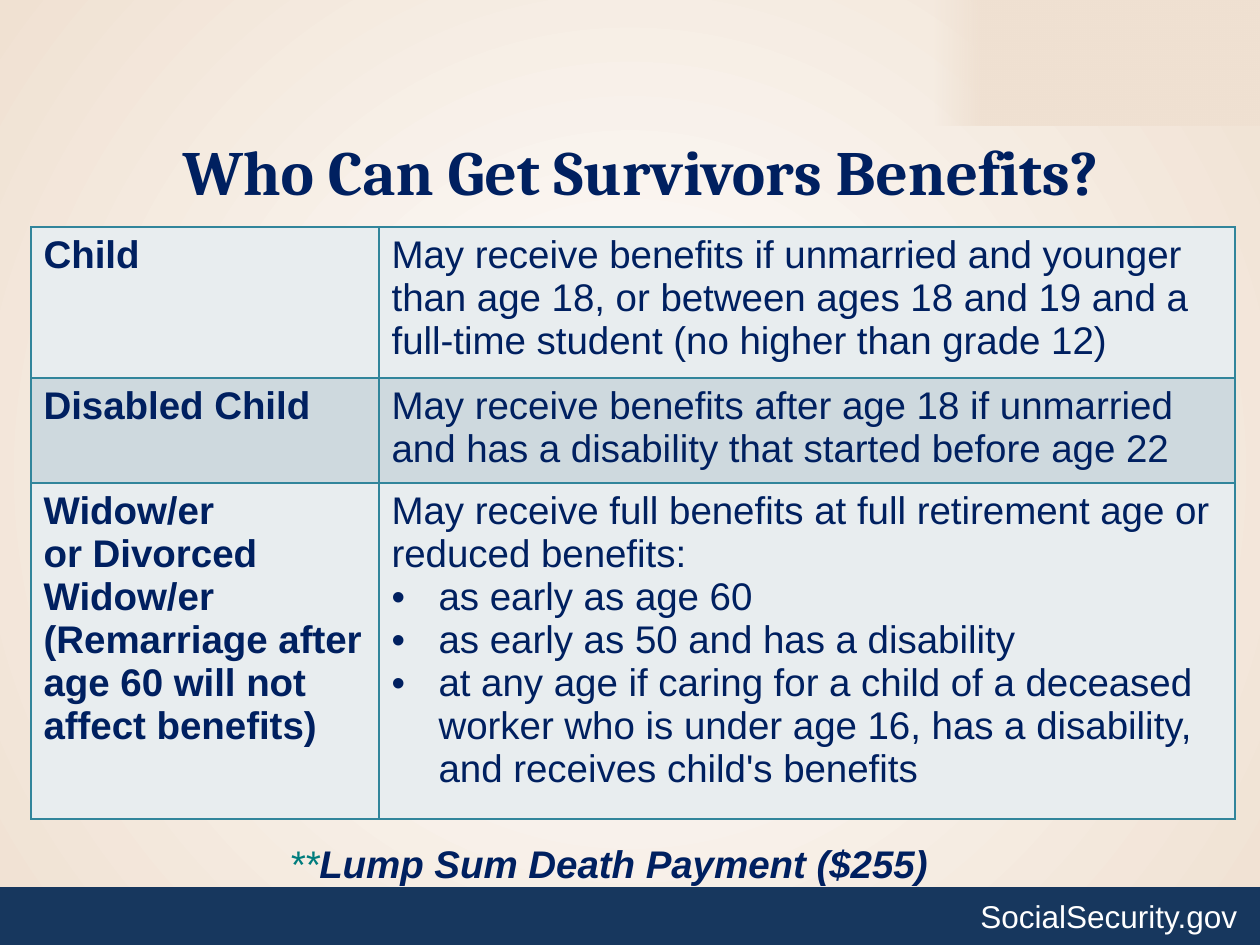
from dataclasses import dataclass

from lxml import etree
from pptx import Presentation
from pptx import util as u
from pptx.dml.color import RGBColor
from pptx.enum import shapes, text
from pptx.oxml import ns


@dataclass(frozen=True)
class Theme:
    navy: str = "002060"
    bar: str = "17375E"
    white: str = "FFFFFF"
    sand: str = "F0E1D2"
    teal: str = "007D7D"
    border: str = "31859B"
    bands: tuple = ("E8EDEF", "CED9DE")
    heading_font: str = "Cambria"
    body_font: str = "Arial"
    title_size: int = 36
    body_size: int = 22
    footer_size: int = 18


THEME = Theme()
EMU_PER_PX = u.Inches(1) / 126

# Each row: label paragraphs, statement, bullet points, height in px
ROWS = [
    (["Child"],
     "May receive benefits if unmarried and younger than age 18, or between "
     "ages 18 and 19 and a full-time student (no higher than grade 12)",
     [], 151),
    (["Disabled Child"],
     "May receive benefits after age 18 if unmarried and has a disability "
     "that started before age 22",
     [], 105),
    (["Widow/er", "or Divorced Widow/er",
      "(Remarriage after age 60 will not affect benefits)"],
     "May receive full benefits at full retirement age or reduced benefits:",
     ["as early as age 60",
      "as early as 50 and has a disability",
      "at any age if caring for a child of a deceased worker who is under "
      "age 16, has a disability, and receives child's benefits"], 336),
]


def px(value):
    return u.Emu(round(value * EMU_PER_PX))


def rgb(colour):
    return RGBColor.from_string(colour)


def add_text(paragraph, words, size=THEME.body_size, colour=THEME.navy,
             font=THEME.body_font, bold=False, italic=False):
    run = paragraph.add_run()
    run.text = words
    run.font.size = u.Pt(size)
    run.font.name = font
    run.font.bold = bold
    run.font.italic = italic
    run.font.color.rgb = rgb(colour)


def add_box(slide, left, top, width, height):
    shape = slide.shapes.add_textbox(px(left), px(top), px(width), px(height))
    shape.text_frame.word_wrap = True
    return shape.text_frame.paragraphs[0]


def add_panel(slide, left, top, width, height):
    shape = slide.shapes.add_shape(shapes.MSO_SHAPE.RECTANGLE, px(left),
                                   px(top), px(width), px(height))
    shape.shadow.inherit = False
    shape.line.fill.background()
    return shape


def set_gradient(fill, *stops):
    fill.gradient()
    for stop, (position, colour) in zip(fill.gradient_stops, stops):
        stop.position = position
        stop.color.rgb = rgb(colour)


def add_background(slide):
    set_gradient(slide.background.fill, (0, THEME.white), (1, THEME.sand))
    # Radiate from the centre instead of along a line
    gradient = slide.element.find(".//" + ns.qn("a:gradFill"))
    gradient.remove(gradient.find(ns.qn("a:lin")))
    path = etree.SubElement(gradient, ns.qn("a:path"), path="circle")
    etree.SubElement(path, ns.qn("a:fillToRect"),
                     {side: "50000" for side in "ltrb"})


def add_corner(slide, left, top, width, height):
    panel = add_panel(slide, left, top, width, height)
    set_gradient(panel.fill, (0, THEME.sand), (0.15, THEME.sand))
    panel.fill.gradient_angle = 0
    # The left edge fades in from transparent
    first_colour = panel.element.find(".//" + ns.qn("a:srgbClr"))
    etree.SubElement(first_colour, ns.qn("a:alpha"), val="0")


def add_footer(slide, left, top, width, height):
    panel = add_panel(slide, left, top, width, height)
    panel.fill.solid()
    panel.fill.fore_color.rgb = rgb(THEME.bar)
    label_width = 292
    paragraph = add_box(slide, left + width - label_width, top + 4,
                        label_width, 50)
    add_text(paragraph, "SocialSecurity.gov", size=THEME.footer_size,
             colour=THEME.white)


def add_title(slide, left, top, width, height):
    title = slide.shapes.title
    title.left, title.top = px(left), px(top)
    title.width, title.height = px(width), px(height)
    frame = title.text_frame
    frame.auto_size = text.MSO_AUTO_SIZE.NONE
    frame.vertical_anchor = text.MSO_ANCHOR.TOP
    paragraph = frame.paragraphs[0]
    paragraph.alignment = text.PP_ALIGN.CENTER
    add_text(paragraph, "Who Can Get Survivors Benefits?",
             size=THEME.title_size, font=THEME.heading_font, bold=True)


def add_bullet(paragraph):
    properties = paragraph._p.get_or_add_pPr()
    indent = px(47)
    properties.set("marL", str(indent))
    properties.set("indent", str(-indent))
    etree.SubElement(properties, ns.qn("a:buFont"), typeface=THEME.body_font)
    etree.SubElement(properties, ns.qn("a:buChar"), char="•")


def style_cell(cell, colour):
    properties = cell._tc.get_or_add_tcPr()
    for edge in ("lnL", "lnR", "lnT", "lnB"):
        line = etree.SubElement(properties, ns.qn("a:" + edge),
                                w=str(u.Pt(1)))
        solid = etree.SubElement(line, ns.qn("a:solidFill"))
        etree.SubElement(solid, ns.qn("a:srgbClr"), val=THEME.border)
    cell.fill.solid()
    cell.fill.fore_color.rgb = rgb(colour)


def fill_cell(cell, lines, bold=False, bullets=()):
    frame = cell.text_frame
    for index, words in enumerate([*lines, *bullets]):
        paragraph = frame.add_paragraph() if index else frame.paragraphs[0]
        if index >= len(lines):
            add_bullet(paragraph)
        add_text(paragraph, words, bold=bold)


def add_benefits_table(slide, left, top, width, label_width):
    height = sum(row[-1] for row in ROWS)
    table = slide.shapes.add_table(len(ROWS), 2, px(left), px(top),
                                   px(width), px(height)).table
    table.first_row = table.horz_banding = False
    table.columns[0].width = px(label_width)
    table.columns[1].width = px(width - label_width)
    for index, (labels, statement, bullets, row_height) in enumerate(ROWS):
        table.rows[index].height = px(row_height)
        label_cell, detail_cell = table.rows[index].cells
        fill_cell(label_cell, labels, bold=True)
        fill_cell(detail_cell, [statement], bullets=bullets)
        for cell in (label_cell, detail_cell):
            style_cell(cell, THEME.bands[index % 2])


def add_footnote(slide, left, top, width, height):
    paragraph = add_box(slide, left, top, width, height)
    add_text(paragraph, "**", colour=THEME.teal, italic=True)
    add_text(paragraph, "Lump Sum Death Payment ($255)", bold=True,
             italic=True)


def main():
    presentation = Presentation()
    presentation.slide_width, presentation.slide_height = px(1260), px(945)
    slide = presentation.slides.add_slide(presentation.slide_layouts[5])
    add_background(slide)
    add_corner(slide, 935, 0, 325, 126)
    add_footer(slide, 0, 887, 1260, 58)
    add_title(slide, 63, 126, 1155, 88)
    add_benefits_table(slide, 31, 227, 1204, 348)
    add_footnote(slide, 277, 834, 704, 56)
    presentation.save("out.pptx")


if __name__ == "__main__":
    main()
